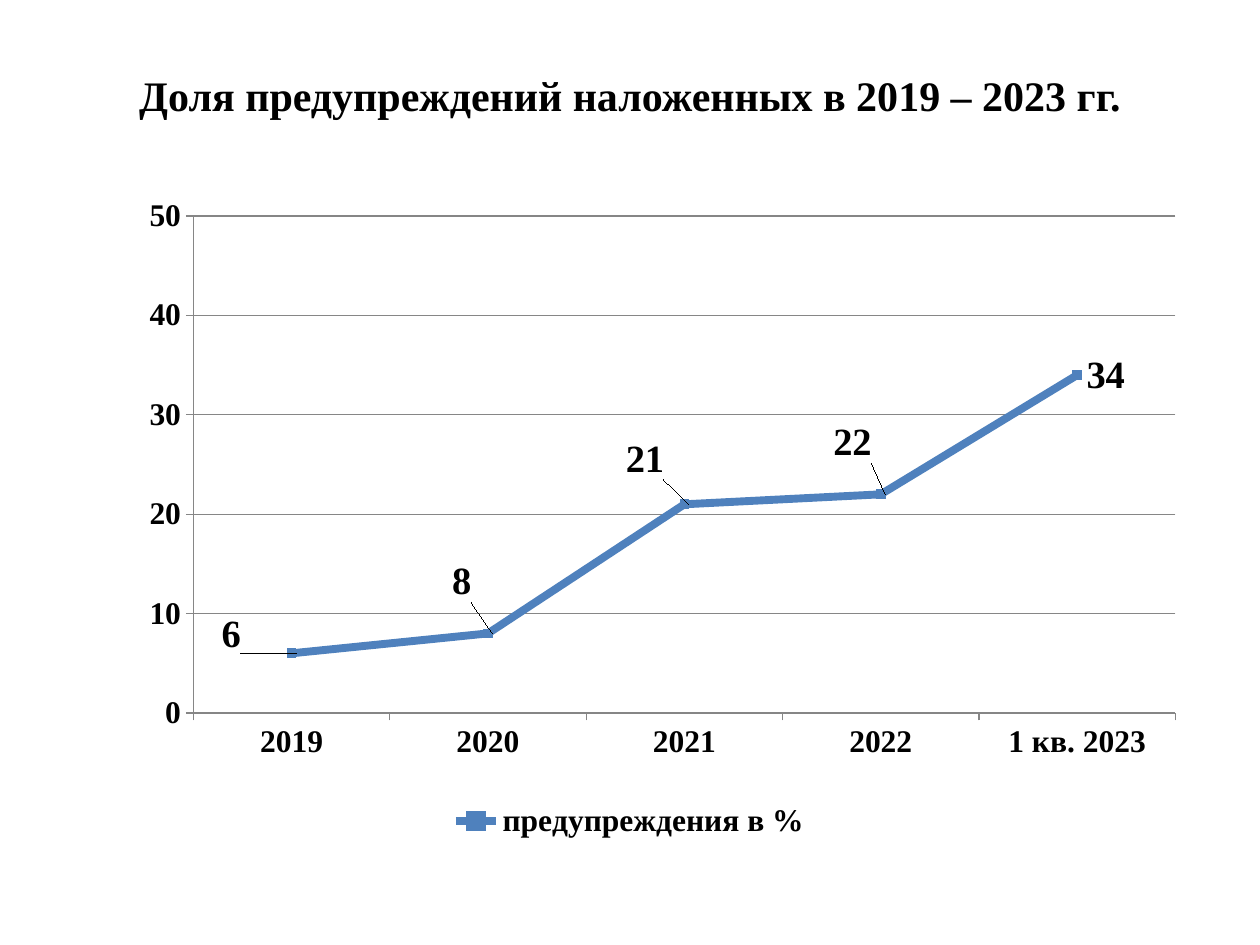
from lxml import etree
from pptx import Presentation
from pptx.chart.data import CategoryChartData
from pptx.dml.color import RGBColor
from pptx.enum.chart import (XL_CHART_TYPE, XL_LABEL_POSITION, XL_LEGEND_POSITION,
                             XL_MARKER_STYLE, XL_TICK_MARK)
from pptx.enum.text import MSO_ANCHOR, PP_ALIGN
from pptx.oxml.ns import qn
from pptx.util import Inches, Pt

LINE_MARKERS = XL_CHART_TYPE.LINE_MARKERS
RIGHT = XL_LABEL_POSITION.RIGHT
BOTTOM = XL_LEGEND_POSITION.BOTTOM
SQUARE = XL_MARKER_STYLE.SQUARE
OUTSIDE = XL_TICK_MARK.OUTSIDE

FONT = "Times New Roman"
BLACK, BLUE, GRAY = "000000", "4F81BD", "868686"

SHARES = {"2019": 6, "2020": 8, "2021": 21, "2022": 22, "1 кв. 2023": 34}
# Shift of the first labels from their default place, as shares of the chart size
LABEL_SHIFTS = [(-0.07, -0.03), (-0.04, -0.08), (-0.06, -0.07), (-0.05, -0.08)]


def color(value):
    return RGBColor.from_string(value)


def format_font(font, size):
    font.name = FONT
    font.size = Pt(size)
    font.bold = True
    font.color.rgb = color(BLACK)


def format_line(line, value, width):
    line.color.rgb = color(value)
    line.width = Pt(width)


def add_text(slide, text, box, size, align=PP_ALIGN.CENTER, bottom_margin=0.05):
    shape = slide.shapes.add_textbox(*map(Inches, box))
    frame = shape.text_frame
    frame.word_wrap = True
    frame.vertical_anchor = MSO_ANCHOR.MIDDLE
    frame.margin_bottom = Inches(bottom_margin)
    paragraph = frame.paragraphs[0]
    paragraph.alignment = align
    run = paragraph.add_run()
    run.text = text
    format_font(run.font, size)


def make_layout(**values):
    """Return a manual chart layout; the keywords are its elements in schema order."""
    layout = etree.Element(qn("c:layout"))
    manual = etree.SubElement(layout, qn("c:manualLayout"))
    for name, value in values.items():
        etree.SubElement(manual, qn(f"c:{name}")).set("val", str(value))
    return layout


def place_plot(chart):
    plot_area = chart.element.xpath(".//c:plotArea")[0]
    for old_layout in plot_area.findall(qn("c:layout")):
        plot_area.remove(old_layout)
    plot_area.insert(0, make_layout(layoutTarget="inner", xMode="edge", yMode="edge",
                                    x=0.115, y=0.032, w=0.866, h=0.766))


def format_axes(chart):
    for axis in (chart.category_axis, chart.value_axis):
        axis.major_tick_mark = OUTSIDE
        format_line(axis.format.line, GRAY, 0.75)
        format_font(axis.tick_labels.font, 18)
    chart.category_axis.has_major_gridlines = False
    value_axis = chart.value_axis
    value_axis.minimum_scale = 0
    value_axis.maximum_scale = 50
    value_axis.major_unit = 10
    value_axis.has_major_gridlines = True
    format_line(value_axis.major_gridlines.format.line, GRAY, 0.75)


def format_series(series):
    series.smooth = False
    format_line(series.format.line, BLUE, 4.5)
    marker = series.marker
    marker.style = SQUARE
    marker.size = 5
    marker.format.fill.solid()
    marker.format.fill.fore_color.rgb = color(BLUE)
    marker.format.line.color.rgb = color(BLUE)


def add_value_labels(chart, series):
    labels = series.data_labels
    labels.show_value = True
    labels.position = RIGHT
    format_font(labels.font, 22)
    for index in range(len(LABEL_SHIFTS)):
        label = series.points[index].data_label
        label.position = RIGHT
        format_font(label.font, 22)
    for element, (x, y) in zip(chart.element.xpath(".//c:dLbl"), LABEL_SHIFTS):
        element.insert(1, make_layout(x=x, y=y))


def add_share_chart(slide, box):
    data = CategoryChartData()
    data.categories = list(SHARES)
    data.add_series("предупреждения в %", list(SHARES.values()))
    chart = slide.shapes.add_chart(LINE_MARKERS, *map(Inches, box), data).chart
    format_font(chart.font, 18)
    chart.has_title = False
    chart.has_legend = True
    chart.legend.position = BOTTOM
    chart.legend.include_in_layout = False
    format_font(chart.legend.font, 18)
    plot = chart.plots[0]
    plot.vary_by_categories = False
    place_plot(chart)
    format_axes(chart)
    format_series(plot.series[0])
    add_value_labels(chart, plot.series[0])


def main():
    presentation = Presentation()
    presentation.slide_width = Inches(10)
    presentation.slide_height = Inches(7.5)
    slide = presentation.slides.add_slide(presentation.slide_layouts[6])
    add_text(slide, "Доля предупреждений наложенных в 2019 – 2023 гг.",
             (0.5, 0.3, 9, 1.25), size=24, bottom_margin=0.4)
    add_share_chart(slide, (0.5, 1.55, 9, 5.15))
    presentation.save("out.pptx")


if __name__ == "__main__":
    main()
